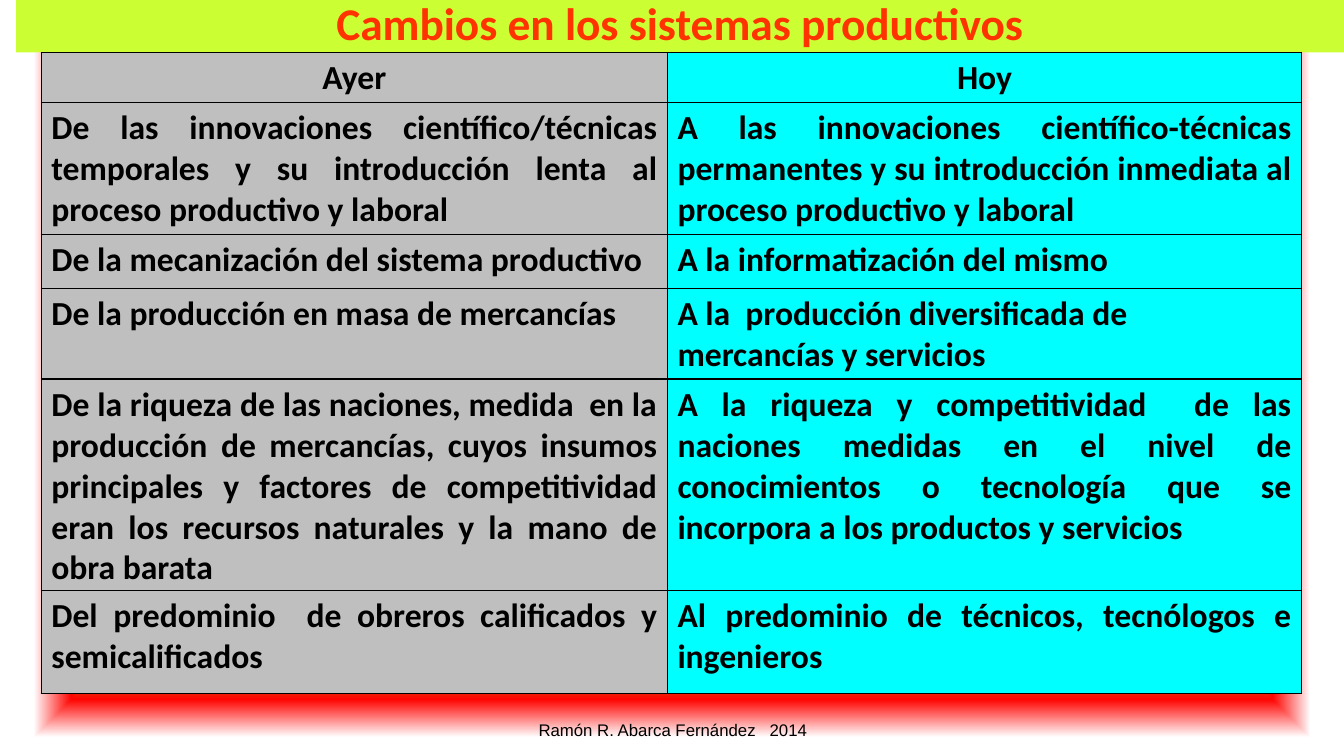
"""Build the slide that compares production systems of yesterday and today."""
from dataclasses import dataclass
from typing import NamedTuple

from pptx import Presentation
from pptx.dml.color import RGBColor
from pptx.enum.text import MSO_ANCHOR, MSO_AUTO_SIZE, PP_ALIGN
from pptx.oxml import parse_xml
from pptx.oxml.ns import nsdecls, qn
from pptx.slide import Slide
from pptx.table import _Cell
from pptx.text.text import TextFrame
from pptx.util import Inches, Pt


class Face(NamedTuple):
    """Type settings for one kind of text."""
    font: str
    size: float
    color: str
    bold: bool


@dataclass(frozen=True)
class Theme:
    """Colours and type of the slide."""
    band: str = "CCFF33"
    past: str = "BFBFBF"
    now: str = "00FFFF"
    line: str = "000000"
    glow: tuple = ((49, "FFFF00"), (70, "66FF33"), (85, "FF0300"), (95, "FFFFFF"))
    title: Face = Face("Calibri", 32.4, "FF3300", True)
    cell: Face = Face("Calibri", 24, "000000", True)
    foot: Face = Face("Arial", 12, "000000", False)


class Row(NamedTuple):
    """One comparison between yesterday and today."""
    height: float
    past: str
    now: str
    align: PP_ALIGN = PP_ALIGN.JUSTIFY


class Box(NamedTuple):
    """Place and size in inches."""
    left: float
    top: float
    width: float
    height: float

    def emu(self) -> list[int]:
        """Give the four lengths in slide units."""
        return [Inches(value) for value in self]


THEME = Theme()
BAND = Box(0.16, 0, 13.17, 0.52)
FOOT = Box(5.09, 6.98, 3.17, 0.52)
GRID = Box(0.41, 0.52, 12.5, 5.99)
COLS = (6.21, 6.29)
ROWS = (
    Row(0.45, "Ayer", "Hoy", PP_ALIGN.CENTER),
    Row(1.31,
        "De las innovaciones científico/técnicas temporales y su introducción "
        "lenta al proceso productivo y laboral",
        "A las innovaciones científico-técnicas permanentes y su introducción "
        "inmediata al proceso productivo y laboral"),
    Row(0.53, "De la mecanización del sistema productivo",
        "A la informatización del mismo"),
    Row(0.8, "De la producción en masa de mercancías",
        "A la  producción diversificada de \nmercancías y servicios"),
    Row(1.88,
        "De la riqueza de las naciones, medida  en la producción de mercancías, "
        "cuyos insumos principales y factores de competitividad eran los "
        "recursos naturales y la mano de obra barata",
        "A la riqueza y competitividad  de las naciones medidas en el nivel de "
        "conocimientos o tecnología que se incorpora a los productos y servicios"),
    Row(1.02, "Del predominio  de obreros calificados y semicalificados",
        "Al predominio de técnicos, tecnólogos e ingenieros"),
)


def write(frame: TextFrame, text: str, face: Face, align: PP_ALIGN) -> None:
    """Set the text of a frame and format its runs."""
    frame.text = text
    for para in frame.paragraphs:
        para.alignment = align
        for run in para.runs:
            run.font.name = face.font
            run.font.size = Pt(face.size)
            run.font.bold = face.bold
            run.font.color.rgb = RGBColor.from_string(face.color)


def frame_cell(cell: _Cell) -> None:
    """Draw a thin line on each side of a cell."""
    props = cell._tc.get_or_add_tcPr()
    for spot, side in enumerate("LRTB"):
        props.insert(spot, parse_xml(
            f'<a:ln{side} {nsdecls("a")} w="12700"><a:solidFill>'
            f'<a:srgbClr val="{THEME.line}"/></a:solidFill></a:ln{side}>'))


def add_glow(slide: Slide) -> None:
    """Fill the background with a gradient that spreads from the centre."""
    slide.background.fill.gradient()
    old = slide.element.find(f".//{qn('a:gradFill')}")
    stops = "".join(f'<a:gs pos="{place * 1000}"><a:srgbClr val="{color}"/></a:gs>'
                    for place, color in THEME.glow)
    old.getparent().replace(old, parse_xml(
        f'<a:gradFill {nsdecls("a")} rotWithShape="1"><a:gsLst>{stops}</a:gsLst>'
        '<a:path path="rect"><a:fillToRect l="50000" t="50000" r="50000" b="50000"/>'
        '</a:path></a:gradFill>'))


def add_title(slide: Slide) -> None:
    """Fill the title band."""
    title = slide.shapes.title
    title.left, title.top, title.width, title.height = BAND.emu()
    title.fill.solid()
    title.fill.fore_color.rgb = RGBColor.from_string(THEME.band)
    frame = title.text_frame
    write(frame, "Cambios en los sistemas productivos", THEME.title, PP_ALIGN.CENTER)
    frame.auto_size = MSO_AUTO_SIZE.NONE
    frame.vertical_anchor = MSO_ANCHOR.MIDDLE
    frame.paragraphs[0].line_spacing = 0.9


def add_foot(slide: Slide) -> None:
    """Place the author and year at the foot."""
    frame = slide.shapes.add_textbox(*FOOT.emu()).text_frame
    frame.word_wrap = True
    frame.vertical_anchor = MSO_ANCHOR.MIDDLE
    write(frame, "Ramón R. Abarca Fernández   2014", THEME.foot, PP_ALIGN.CENTER)


def add_grid(slide: Slide) -> None:
    """Draw the comparison table."""
    table = slide.shapes.add_table(len(ROWS), len(COLS), *GRID.emu()).table
    for col, width in zip(table.columns, COLS):
        col.width = Inches(width)
    for spot, row in enumerate(ROWS):
        table.rows[spot].height = Inches(row.height)
        sides = ((row.past, THEME.past), (row.now, THEME.now))
        for cell, (text, color) in zip(table.rows[spot].cells, sides):
            cell.fill.solid()
            cell.fill.fore_color.rgb = RGBColor.from_string(color)
            frame_cell(cell)
            write(cell.text_frame, text, THEME.cell, row.align)


def main() -> None:
    """Build and save the deck."""
    deck = Presentation()
    deck.slide_width, deck.slide_height = Inches(13.33), Inches(7.5)
    slide = deck.slides.add_slide(deck.slide_layouts.get_by_name("Title Only"))
    add_glow(slide)
    add_title(slide)
    add_foot(slide)
    add_grid(slide)
    deck.save("out.pptx")


if __name__ == "__main__":
    main()
